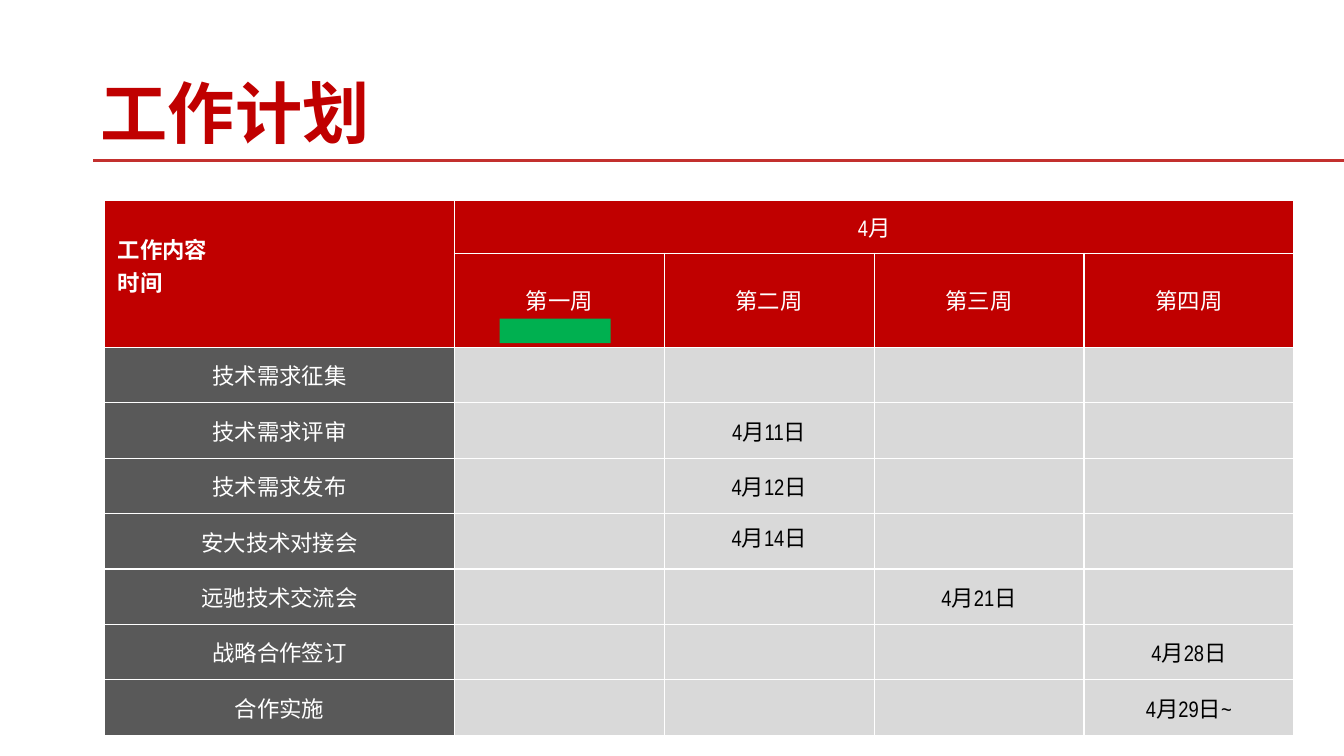
from lxml.etree import SubElement
from pptx import Presentation
from pptx.dml.color import RGBColor
from pptx.enum.shapes import MSO_CONNECTOR as Connector, MSO_SHAPE as Shape
from pptx.enum.text import MSO_ANCHOR as Anchor, PP_ALIGN as Align
from pptx.oxml.ns import qn
from pptx.util import Cm, Pt

RED, GREY, LIGHT, WHITE, BLACK = "C00000", "595959", "D9D9D9", "FFFFFF", "000000"
WEEKS = ["第一周", "第二周", "第三周", "第四周"]
# Task, week number and date
TASKS = [
    ("技术需求征集", None, None),
    ("技术需求评审", 2, "4月11日"),
    ("技术需求发布", 2, "4月12日"),
    ("安大技术对接会", 2, "4月14日"),
    ("远驰技术交流会", 3, "4月21日"),
    ("战略合作签订", 4, "4月28日"),
    ("合作实施", 4, "4月29日~"),
]
TOP_ALIGNED_DATE = "4月14日"


def color(code):
    return RGBColor.from_string(code)


def write(frame, text, size=16, font="Arial Narrow", ink=WHITE, bold=False,
          align=Align.CENTER):
    """Fill a text frame, one paragraph per line of text."""
    frame.text = text
    for para in frame.paragraphs:
        para.alignment = align
        para.font.size = Pt(size)
        for span in para.runs:
            span.font.name = font
            span.font.size = Pt(size)
            span.font.bold = bold
            span.font.color.rgb = color(ink)


def add_borders(cell, ink=WHITE, width=1):
    props = cell._tc.get_or_add_tcPr()
    for side in ("a:lnL", "a:lnR", "a:lnT", "a:lnB"):
        line = SubElement(props, qn(side), w=str(Pt(width)))
        SubElement(SubElement(line, qn("a:solidFill")), qn("a:srgbClr"), val=ink)


def fill_cell(cell, text, fill, anchor=Anchor.MIDDLE, top=0.18, **style):
    add_borders(cell)
    cell.fill.solid()
    cell.fill.fore_color.rgb = color(fill)
    cell.margin_left = cell.margin_right = Cm(0.33)
    cell.margin_top, cell.margin_bottom = Cm(top), Cm(0.18)
    cell.vertical_anchor = anchor
    write(cell.text_frame, text, **style)


def add_heading(page, left, top, width, height):
    """Title with a rule that runs to the right edge of the slide."""
    box = page.shapes.add_textbox(Cm(left), Cm(top), Cm(width), Cm(height))
    box.text_frame.word_wrap = False
    write(box.text_frame, "工作计划", size=48, font="Calibri", ink=RED, bold=True,
          align=Align.LEFT)
    rule_top = Cm(top + height + 0.05)
    rule = page.shapes.add_connector(Connector.STRAIGHT, Cm(33.87), rule_top,
                                     Cm(left + 0.05), rule_top)
    rule.line.color.rgb = color("C3302E")
    rule.line.width = Pt(2.25)
    SubElement(rule._element.spPr, qn("a:effectLst"))


def add_schedule(page, left, top, width, height):
    """Table of tasks by week, with a progress bar under the first week."""
    task_width, month_height, week_height = 8.81, 1.32, 2.37
    week_width = (width - task_width) / len(WEEKS)
    task_height = (height - month_height - week_height) / len(TASKS)
    table = page.shapes.add_table(len(TASKS) + 2, len(WEEKS) + 1, Cm(left), Cm(top),
                                  Cm(width), Cm(height)).table
    for column, size in zip(table.columns, [task_width] + [week_width] * len(WEEKS)):
        column.width = Cm(size)
    heights = [month_height, week_height] + [task_height] * len(TASKS)
    for row, size in zip(table.rows, heights):
        row.height = Cm(size)

    table.cell(0, 0).merge(table.cell(1, 0))
    table.cell(0, 1).merge(table.cell(0, len(WEEKS)))
    fill_cell(table.cell(0, 0), "工作内容\n时间", RED, anchor=Anchor.TOP, top=0.81,
              bold=True, align=Align.LEFT)
    fill_cell(table.cell(1, 0), "", RED)
    for week, name in enumerate(WEEKS, 1):
        fill_cell(table.cell(0, week), "4月" if week == 1 else "", RED)
        fill_cell(table.cell(1, week), name, RED)
    for row, (task, due_week, date) in enumerate(TASKS, 2):
        fill_cell(table.cell(row, 0), task, GREY)
        for week in range(1, len(WEEKS) + 1):
            text = date if week == due_week else ""
            anchor = Anchor.TOP if text == TOP_ALIGNED_DATE else Anchor.MIDDLE
            fill_cell(table.cell(row, week), text, LIGHT, anchor=anchor, ink=BLACK)

    bar = page.shapes.add_shape(Shape.RECTANGLE, Cm(left + task_width + 1.14),
                                Cm(top + 2.97), Cm(2.8), Cm(0.62))
    bar.shadow.inherit = False
    bar.fill.solid()
    bar.fill.fore_color.rgb = color("00B050")
    bar.line.fill.background()


def main():
    deck = Presentation()
    deck.slide_width, deck.slide_height = Cm(33.87), Cm(19.05)
    page = deck.slides.add_slide(deck.slide_layouts[6])
    add_heading(page, 2.29, 1.68, 7.34, 2.31)
    add_schedule(page, 2.64, 5.06, 29.97, 13.47)
    deck.save("out.pptx")


if __name__ == "__main__":
    main()
